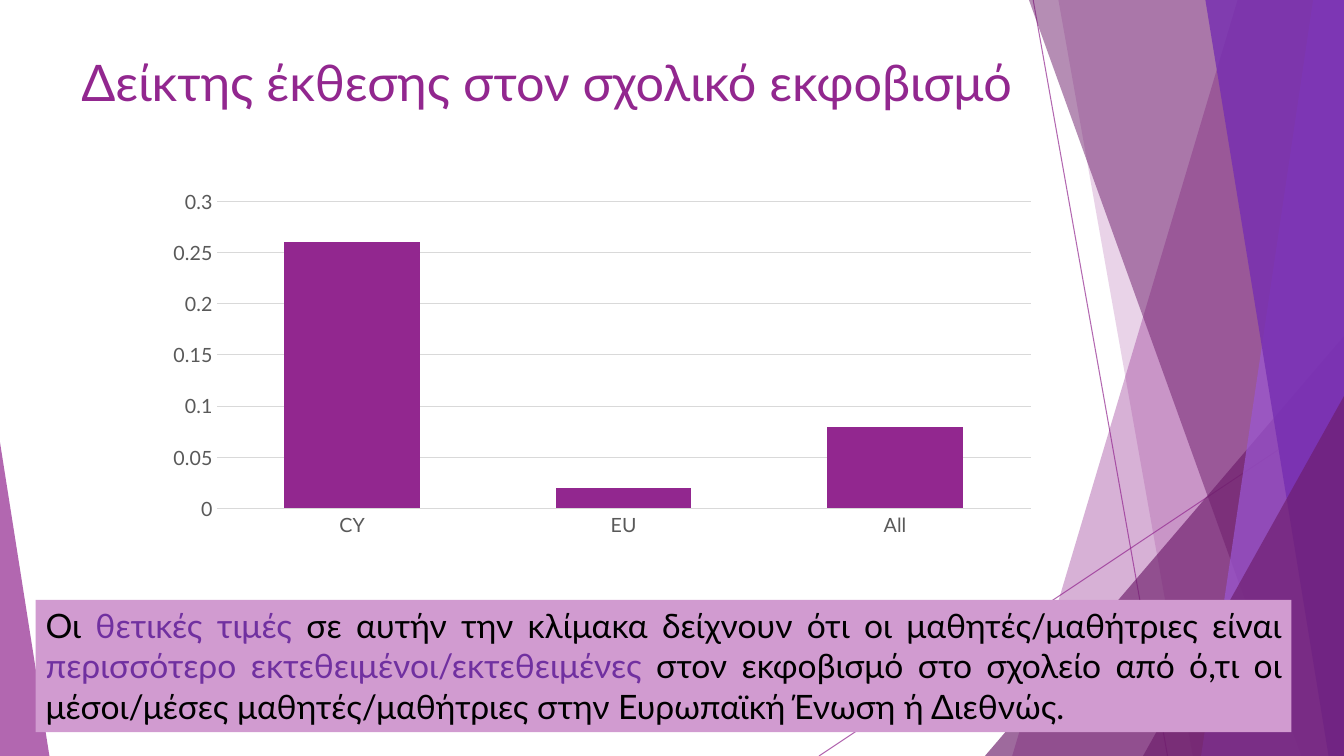
from dataclasses import dataclass

from lxml.etree import SubElement as Sub
from pptx import Presentation
from pptx.chart.data import CategoryChartData as ChartData
from pptx.dml.color import RGBColor as RGB
from pptx.enum.chart import XL_CHART_TYPE as Chart, XL_TICK_MARK as Tick
from pptx.enum.shapes import MSO_CONNECTOR as Conn, MSO_SHAPE as Shape
from pptx.enum.text import MSO_ANCHOR as Anchor, PP_ALIGN as Align
from pptx.oxml.ns import qn
from pptx.util import Pt


@dataclass(frozen=True)
class Theme:
    font: str = "Lato"
    plum: str = "92278F"
    dark: str = "6D1D6B"
    lilac: str = "9B57D3"
    violet: str = "762EB1"
    pink: str = "D19BD0"
    accent: str = "7030A0"
    black: str = "000000"
    gray: str = "595959"
    grid: str = "D9D9D9"
    head: int = 36
    body: int = 24
    label: int = 14


WIDE, HIGH = 960, 540


class Deck:
    def __init__(self, theme):
        self.theme = theme
        self.prs = Presentation()
        self.prs.slide_width, self.prs.slide_height = Pt(WIDE), Pt(HIGH)
        self.slide = self.prs.slides.add_slide(self.prs.slide_layouts[5])
        self.shapes = self.slide.shapes

    def fade(self, props, alpha):
        tone = props.find(".//" + qn("a:srgbClr"))
        Sub(tone, qn("a:alpha")).set("val", str(alpha * 1000))

    def paint(self, shape, color, alpha=100):
        shape.shadow.inherit = False
        shape.fill.solid()
        shape.fill.fore_color.rgb = RGB.from_string(color)
        shape.line.fill.background()
        if alpha < 100:
            self.fade(shape._element.spPr, alpha)

    def style(self, font, size, color):
        font.name, font.size = self.theme.font, Pt(size)
        font.color.rgb = RGB.from_string(color)

    def add_runs(self, para, runs, size):
        for text, color in runs:
            run = para.add_run()
            run.text = text
            self.style(run.font, size, color)

    def line(self, start, end, color, alpha):
        line = self.shapes.add_connector(
            Conn.STRAIGHT, *(Pt(v) for v in start + end))
        line.line.width = Pt(0.75)
        line.line.color.rgb = RGB.from_string(color)
        props = line._element.spPr
        self.fade(props, alpha)
        Sub(props, qn("a:effectLst"))

    def band(self, top, base, color, alpha):
        """Slanted edge from top to base, filled out to the right side."""
        form = self.shapes.build_freeform(Pt(top), 0)
        form.add_line_segments(
            [(Pt(x), Pt(y)) for x, y in
             ((WIDE, 0), (WIDE, HIGH), (base, HIGH))], close=True)
        self.paint(form.convert_to_shape(), color, alpha)

    def wedge(self, left, top, width, tip, color, alpha):
        """Triangle standing on the bottom edge."""
        shape = self.shapes.add_shape(
            Shape.ISOSCELES_TRIANGLE,
            Pt(left), Pt(top), Pt(width), Pt(HIGH - top))
        shape.adjustments[0] = tip
        self.paint(shape, color, alpha)

    def title(self, text, *box):
        head = self.shapes.title
        head.left, head.top, head.width, head.height = map(Pt, box)
        frame = head.text_frame
        frame.word_wrap = True
        frame.vertical_anchor = Anchor.TOP
        para = frame.paragraphs[0]
        para.alignment = Align.LEFT
        self.add_runs(para, [(text, self.theme.plum)], self.theme.head)

    def note(self, runs, *box):
        shape = self.shapes.add_shape(Shape.RECTANGLE, *map(Pt, box))
        self.paint(shape, self.theme.pink)
        frame = shape.text_frame
        frame.word_wrap = True
        frame.vertical_anchor = Anchor.TOP
        para = frame.paragraphs[0]
        para.alignment = Align.JUSTIFY
        self.add_runs(para, runs, self.theme.body)

    def chart(self, cats, name, vals, *box):
        look = self.theme
        data = ChartData()
        data.categories = cats
        data.add_series(name, vals)
        chart = self.shapes.add_chart(
            Chart.COLUMN_CLUSTERED, *map(Pt, box), data).chart
        chart.has_legend = chart.has_title = False
        self.style(chart.font, look.label, look.gray)
        # Bars
        plot = chart.plots[0]
        plot.vary_by_categories = False
        plot.gap_width, plot.overlap = 100, -27
        bars = plot.series[0].format.fill
        bars.solid()
        bars.fore_color.rgb = RGB.from_string(look.plum)
        # Axes
        cat, val = chart.category_axis, chart.value_axis
        for axis in (cat, val):
            axis.major_tick_mark = axis.minor_tick_mark = Tick.NONE
            self.style(axis.tick_labels.font, look.label, look.gray)
        val.minimum_scale, val.maximum_scale, val.major_unit = 0, 0.3, 0.05
        val.format.line.fill.background()
        val.has_major_gridlines = True
        for part in (cat, val.major_gridlines):
            part.format.line.width = Pt(0.75)
            part.format.line.color.rgb = RGB.from_string(look.grid)


def main():
    look = Theme()
    deck = Deck(look)

    # Backdrop
    deck.line((738, 0), (834, HIGH), look.plum, 70)
    deck.line((WIDE, 290), (585, HIGH), look.plum, 70)
    deck.band(884, 723, look.plum, 36)
    deck.band(756, 852, look.plum, 20)
    deck.wedge(703.5, 240, 256.5, 1, look.dark, 66)
    deck.band(735, 929.5, look.dark, 50)
    deck.band(938, 858, look.lilac, 70)
    deck.band(861, 949, look.violet, 80)
    deck.wedge(816.5, 283, 143.5, 1, look.dark, 66)
    deck.wedge(0, 316, 35.3, 0, look.plum, 70)

    # Title
    deck.title("Δείκτης έκθεσης στον σχολικό εκφοβισμό", 51, 33, 758, 107)

    # Explanation
    deck.note([
        ("Οι ", look.black),
        ("θετικές τιμές ", look.accent),
        ("σε αυτήν την κλίμακα δείχνουν ότι οι μαθητές/μαθήτριες είναι ",
         look.black),
        ("περισσότερο εκτεθειμένοι/εκτεθειμένες ", look.accent),
        ("στον εκφοβισμό στο σχολείο από ό,τι οι μέσοι/μέσες "
         "μαθητές/μαθήτριες στην Ευρωπαϊκή Ένωση ή Διεθνώς.", look.black),
    ], 25.5, 428.5, 897, 94.5)

    # Exposure index
    deck.chart(("CY", "EU", "All"), "Series 1", (0.26, 0.02, 0.08),
               111, 130, 638, 258.5)

    deck.prs.save("out.pptx")


if __name__ == "__main__":
    main()
